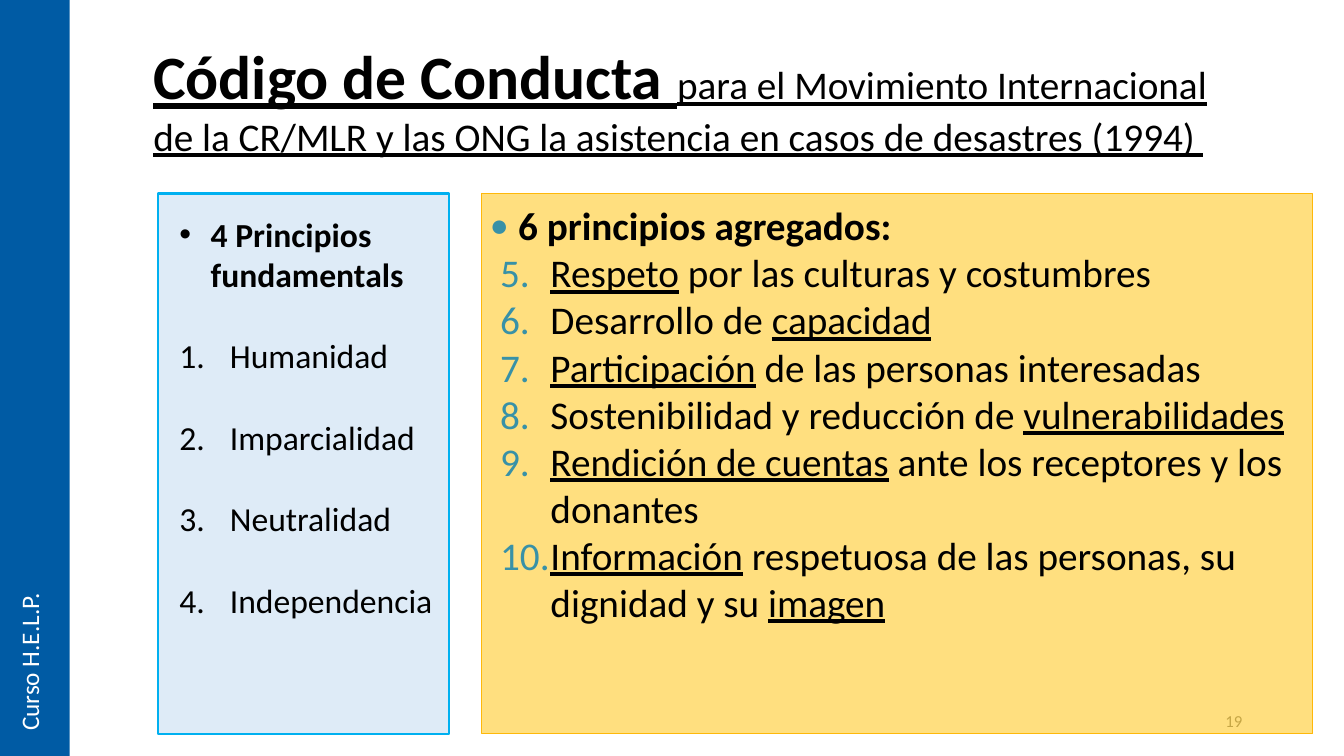
from dataclasses import dataclass
from typing import Any, Optional

import pptx
import pptx.dml.color
import pptx.enum.shapes
import pptx.enum.text
import pptx.oxml.ns
import pptx.util
from lxml import etree

Inches = pptx.util.Inches
Pt = pptx.util.Pt
RGBColor = pptx.dml.color.RGBColor
Align = pptx.enum.text.PP_ALIGN
Anchor = pptx.enum.text.MSO_ANCHOR
qn = pptx.oxml.ns.qn

FONT = "Calibri"
BLACK = RGBColor(0x00, 0x00, 0x00)
WHITE = RGBColor(0xFF, 0xFF, 0xFF)
GRAY = RGBColor(0x8C, 0x8C, 0x8C)
BAR_BLUE = RGBColor(0x00, 0x5B, 0xA4)
PALE_BLUE = RGBColor(0xDE, 0xEB, 0xF7)
SKY_BLUE = RGBColor(0x00, 0xB0, 0xF0)
AMBER = RGBColor(0xFF, 0xC0, 0x00)
AMBER_LINE = RGBColor(0xFE, 0xB8, 0x0A)
TEAL = RGBColor(0x38, 0x91, 0xA7)


@dataclass
class Box:
    left: float
    top: float
    width: float
    height: float

    def lengths(self) -> list[int]:
        return [Inches(value) for value in (self.left, self.top, self.width, self.height)]


@dataclass
class Run:
    text: str
    underline: bool = False


@dataclass
class ListStyle:
    indent: float
    hanging: float
    bullet: str = ""
    start: int = 1
    color: RGBColor = BLACK
    percent: int = 100
    level: int = 0


ADDED_PRINCIPLES = [
    [Run("Respeto", True), Run(" por las culturas y costumbres")],
    [Run("Desarrollo de "), Run("capacidad", True)],
    [Run("Participación", True), Run(" de las personas interesadas")],
    [Run("Sostenibilidad y reducción de "), Run("vulnerabilidades", True)],
    [Run("Rendición de cuentas", True), Run(" ante los receptores y los donantes")],
    [Run("Información", True), Run(" respetuosa de las personas, su dignidad y su "), Run("imagen", True)],
]
BASIC_PRINCIPLES = ["Humanidad", "Imparcialidad", "Neutralidad", "Independencia"]


def write_text(paragraph: Any, text: str, *, size: float, color: RGBColor = BLACK,
               bold: bool = False, underline: bool = False) -> None:
    run = paragraph.add_run()
    run.text = text
    run.font.name = FONT
    run.font.size = Pt(size)
    run.font.bold = bold
    run.font.underline = underline
    run.font.color.rgb = color


def format_list(paragraph: Any, style: ListStyle, space_before: float = 0) -> None:
    paragraph.level = style.level
    paragraph.alignment = Align.LEFT
    paragraph.line_spacing = 1.0
    paragraph.space_before = Pt(space_before)
    properties = paragraph._p.get_or_add_pPr()
    properties.set("marL", str(Inches(style.indent)))
    properties.set("indent", str(-Inches(style.hanging)))
    color = etree.SubElement(properties, qn("a:buClr"))
    etree.SubElement(color, qn("a:srgbClr"), val=str(style.color))
    etree.SubElement(properties, qn("a:buSzPct"), val=str(style.percent * 1000))
    if style.bullet:
        etree.SubElement(properties, qn("a:buFont"), typeface="Arial")
        etree.SubElement(properties, qn("a:buChar"), char=style.bullet)
    else:
        etree.SubElement(properties, qn("a:buFont"), typeface=FONT)
        etree.SubElement(properties, qn("a:buAutoNum"), type="arabicPeriod", startAt=str(style.start))


def place(shape: Any, box: Box) -> Any:
    shape.left, shape.top, shape.width, shape.height = box.lengths()
    frame = shape.text_frame
    frame.word_wrap = True
    frame.auto_size = pptx.enum.text.MSO_AUTO_SIZE.NONE
    frame.vertical_anchor = Anchor.TOP
    return frame


def paint(shape: Any, fill: RGBColor, line: Optional[RGBColor] = None, width: float = 0) -> None:
    shape.fill.solid()
    shape.fill.fore_color.rgb = fill
    if line is None:
        shape.line.fill.background()
    else:
        shape.line.color.rgb = line
        shape.line.width = Pt(width)


def add_rectangle(slide: Any, box: Box) -> Any:
    shape = slide.shapes.add_shape(pptx.enum.shapes.MSO_SHAPE.RECTANGLE, *box.lengths())
    shape.shadow.inherit = False
    return shape


def send_to_back(shape: Any) -> None:
    shape.element.getparent().insert(2, shape.element)


def add_side_bar(slide: Any) -> None:
    paint(add_rectangle(slide, Box(0, 0, 0.69, 7.5)), BAR_BLUE)
    label = slide.shapes.add_textbox(*Box(0.09, 5.81, 0.5, 1.54).lengths())
    label.text_frame.word_wrap = False
    label.text_frame._txBody.bodyPr.set("vert", "vert270")
    write_text(label.text_frame.paragraphs[0], "Curso H.E.L.P.", size=18, color=WHITE)


def add_slide_number(slide: Any) -> None:
    number = slide.shapes.add_textbox(*Box(9.42, 6.95, 3, 0.4).lengths())
    number.text_frame.vertical_anchor = Anchor.MIDDLE
    paragraph = number.text_frame.paragraphs[0]
    paragraph.alignment = Align.RIGHT
    write_text(paragraph, "19", size=12, color=GRAY)
    send_to_back(number)


def fill_title(title: Any) -> None:
    paragraph = place(title, Box(1.42, 0.33, 10.85, 1.58)).paragraphs[0]
    paragraph.alignment = Align.LEFT
    write_text(paragraph, "Código de Conducta ", size=44, bold=True, underline=True)
    write_text(paragraph, "para el Movimiento Internacional de la CR/MLR y las ONG "
               "la asistencia en casos de desastres (1994) ", size=28, underline=True)


def fill_basic_principles(slide: Any, body: Any) -> None:
    panel = add_rectangle(slide, Box(1.57, 1.92, 2.88, 5.36))
    paint(panel, PALE_BLUE, SKY_BLUE, 1.5)
    send_to_back(panel)
    frame = place(body, Box(1.68, 2.07, 2.77, 4.14))
    heading = frame.paragraphs[0]
    format_list(heading, ListStyle(0.31, 0.31, bullet="•"))
    write_text(heading, "4 Principios fundamentals", size=24, bold=True)
    for principle in BASIC_PRINCIPLES:
        paragraph = frame.add_paragraph()
        format_list(paragraph, ListStyle(0.5, 0.5), space_before=29.3)
        write_text(paragraph, principle, size=24)


def fill_added_principles(body: Any) -> None:
    frame = place(body, Box(4.78, 1.92, 8.24, 5.36))
    paint(body, AMBER, AMBER_LINE, 0.75)
    color = body.element.spPr.find(qn("a:solidFill")).find(qn("a:srgbClr"))
    etree.SubElement(color, qn("a:alpha"), val="50000")
    frame.margin_left = frame.margin_top = frame.margin_right = Inches(0.08)
    frame.margin_bottom = 0
    heading = frame.paragraphs[0]
    format_list(heading, ListStyle(0.28, 0.28, bullet="●", color=TEAL, percent=80))
    write_text(heading, "6 principios agregados:", size=28, bold=True)
    for runs in ADDED_PRINCIPLES:
        paragraph = frame.add_paragraph()
        format_list(paragraph, ListStyle(0.6, 0.5, start=5, color=TEAL, level=1))
        for run in runs:
            write_text(paragraph, run.text, size=28, underline=run.underline)


def main() -> None:
    presentation = pptx.Presentation()
    presentation.slide_width = Inches(13.33)
    presentation.slide_height = Inches(7.5)
    slide = presentation.slides.add_slide(presentation.slide_layouts.get_by_name("Two Content"))
    title, basic_body, added_body = slide.placeholders
    fill_title(title)
    fill_basic_principles(slide, basic_body)
    fill_added_principles(added_body)
    add_side_bar(slide)
    add_slide_number(slide)
    presentation.save("out.pptx")


if __name__ == "__main__":
    main()
